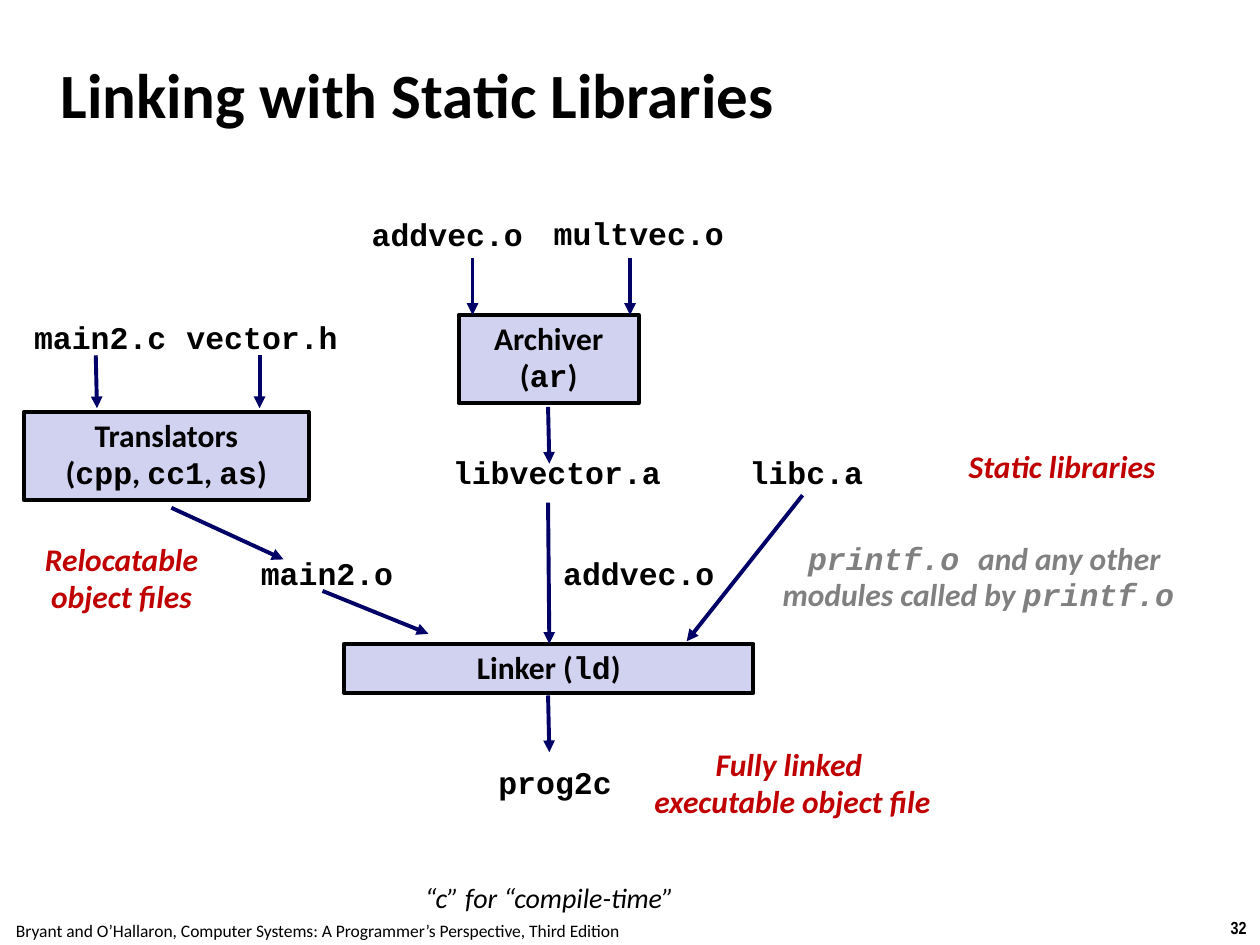
import pptx
import pptx.dml.color
import pptx.enum.shapes
import pptx.enum.text
import pptx.oxml
import pptx.util

Inches, Pt = pptx.util.Inches, pptx.util.Pt
RGB = pptx.dml.color.RGBColor.from_string
ALIGN = pptx.enum.text.PP_ALIGN
ANCHOR = pptx.enum.text.MSO_ANCHOR
COLORS = {"black": "000000", "box": "D1D1F0", "arrow": "000066",
          "note": "C00000", "muted": "808080"}
FONTS = ("Calibri", "Courier New")

prs = pptx.Presentation()
prs.slide_width, prs.slide_height = Inches(10), Inches(7.5)
s = prs.slides.add_slide(prs.slide_layouts[6])


def write(sp, lines, color="black", size=18, bold=True, italic=False,
          diagram=True):
    """Fill a shape with centred lines; backticks enclose code."""
    tf = sp.text_frame
    for i, line in enumerate(lines):
        p = tf.paragraphs[0] if i == 0 else tf.add_paragraph()
        p.alignment = ALIGN.CENTER
        if diagram:
            p.line_spacing = 0.94 if line.startswith("`") else 0.98
        p.font.size, p.font.bold, p.font.italic = Pt(size), bold, italic
        p.font.color.rgb = RGB(COLORS[color])
        parts = [(text, FONTS[n % 2])
                 for n, text in enumerate(line.split("`")) if text]
        for text, font in parts:
            r = p.add_run()
            r.text = text
            if len(parts) > 1:
                r.font.name = font
        if len(parts) == 1:
            p.font.name = parts[0][1]
    return tf


def add_text(x, y, w, h, lines, **style):
    sp = s.shapes.add_textbox(Inches(x), Inches(y), Inches(w), Inches(h))
    tf = write(sp, lines, **style)
    tf.word_wrap = False
    return tf


# Footer and page number
tf = add_text(9.66, 7.23, 0.34, 0.27, ["32"], size=10, diagram=False)
tf.paragraphs[0].font.name = "Arial Narrow"
add_text(-0.02, 7.25, 5.08, 0.27,
         ["Bryant and O’Hallaron, Computer Systems: "
          "A Programmer’s Perspective, Third Edition"],
         size=10, bold=False, diagram=False)

# Title
tf = add_text(0.44, 0.31, 6.14, 0.86, ["Linking with Static Libraries"],
              size=36, diagram=False)
tf.word_wrap = True
tf.vertical_anchor = ANCHOR.MIDDLE
tf.margin_left = tf.margin_right = Inches(0.04)
tf.margin_top = tf.margin_bottom = Inches(0.04)
tf.paragraphs[0].alignment = ALIGN.LEFT

# Tools
for x, y, w, h, lines in [
    (0.19, 3.27, 2.26, 0.7, ["Translators", "(`cpp`, `cc1`, `as`)"]),
    (3.64, 2.5, 1.43, 0.7, ["Archiver", "(`ar`)"]),
    (2.73, 5.11, 3.25, 0.39, ["Linker (`ld`)"]),
]:
    sp = s.shapes.add_shape(pptx.enum.shapes.MSO_SHAPE.RECTANGLE,
                            Inches(x), Inches(y), Inches(w), Inches(h))
    sp.shadow.inherit = False
    sp.fill.solid()
    sp.fill.fore_color.rgb = RGB(COLORS["box"])
    sp.line.color.rgb = RGB(COLORS["black"])
    sp.line.width = Pt(2.25)
    write(sp, lines).vertical_anchor = ANCHOR.TOP

# Arrows between files and tools
for x1, y1, x2, y2 in [
    (0.76, 2.82, 0.77, 3.24), (2.06, 2.82, 2.06, 3.24),
    (3.75, 2.05, 3.75, 2.5), (5, 2.05, 5, 2.5),
    (4.35, 3.23, 4.36, 3.68), (4.35, 3.99, 4.36, 5.11),
    (4.35, 5.52, 4.36, 5.97), (1.36, 4.03, 2.25, 4.44),
    (2.56, 4.69, 3.4, 5.03), (6.37, 3.93, 5.45, 5.09),
]:
    line = s.shapes.add_connector(pptx.enum.shapes.MSO_CONNECTOR.STRAIGHT,
                                  Inches(x1), Inches(y1), Inches(x2), Inches(y2))
    line.line.color.rgb = RGB(COLORS["arrow"])
    line.line.width = Pt(2.25)
    ns = pptx.oxml.ns.nsdecls("a")
    ln = line.line._get_or_add_ln()
    ln.append(pptx.oxml.parse_xml(f'<a:tailEnd {ns} type="triangle"/>'))
    ln.getparent().append(pptx.oxml.parse_xml(f"<a:effectLst {ns}/>"))

# File names
for x, y, w, name in [
    (0.17, 2.5, 1.25, "main2.c"), (1.38, 2.5, 1.4, "vector.h"),
    (2.85, 1.68, 1.4, "addvec.o"), (4.29, 1.67, 1.56, "multvec.o"),
    (3.49, 3.57, 1.86, "libvector.a"), (5.85, 3.57, 1.1, "libc.a"),
    (1.97, 4.37, 1.25, "main2.o"), (4.37, 4.37, 1.4, "addvec.o"),
    (3.85, 6.03, 1.11, "prog2c"),
]:
    add_text(x, y, w, 0.39, [f"`{name}`"])

# Notes
for x, y, w, h, color, lines in [
    (7.58, 3.51, 1.7, 0.4, "note", ["Static libraries"]),
    (0.25, 4.25, 1.43, 0.7, "note", ["Relocatable", "object files"]),
    (5.08, 5.88, 2.42, 0.7, "note", ["Fully linked ", "executable object file"]),
    (6.1, 4.25, 3.48, 0.69, "muted",
     ["`printf.o `and any other ", "modules called by `printf.o `"]),
]:
    add_text(x, y, w, h, lines, color=color, italic=True)
add_text(3.17, 6.94, 2.38, 0.37, ["“c” for “compile-time”"],
         size=16, bold=False, italic=True, diagram=False)

prs.save("out.pptx")
